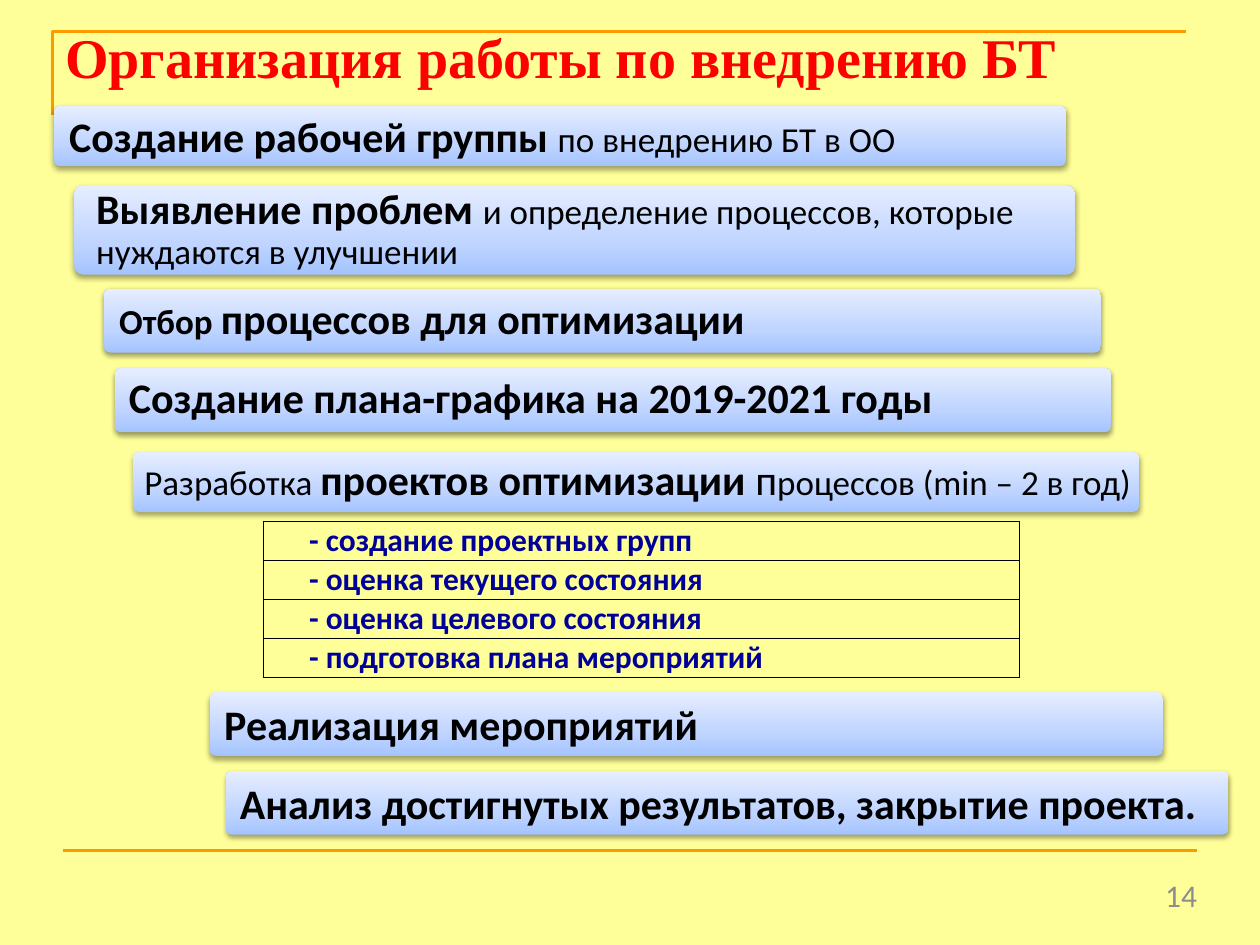
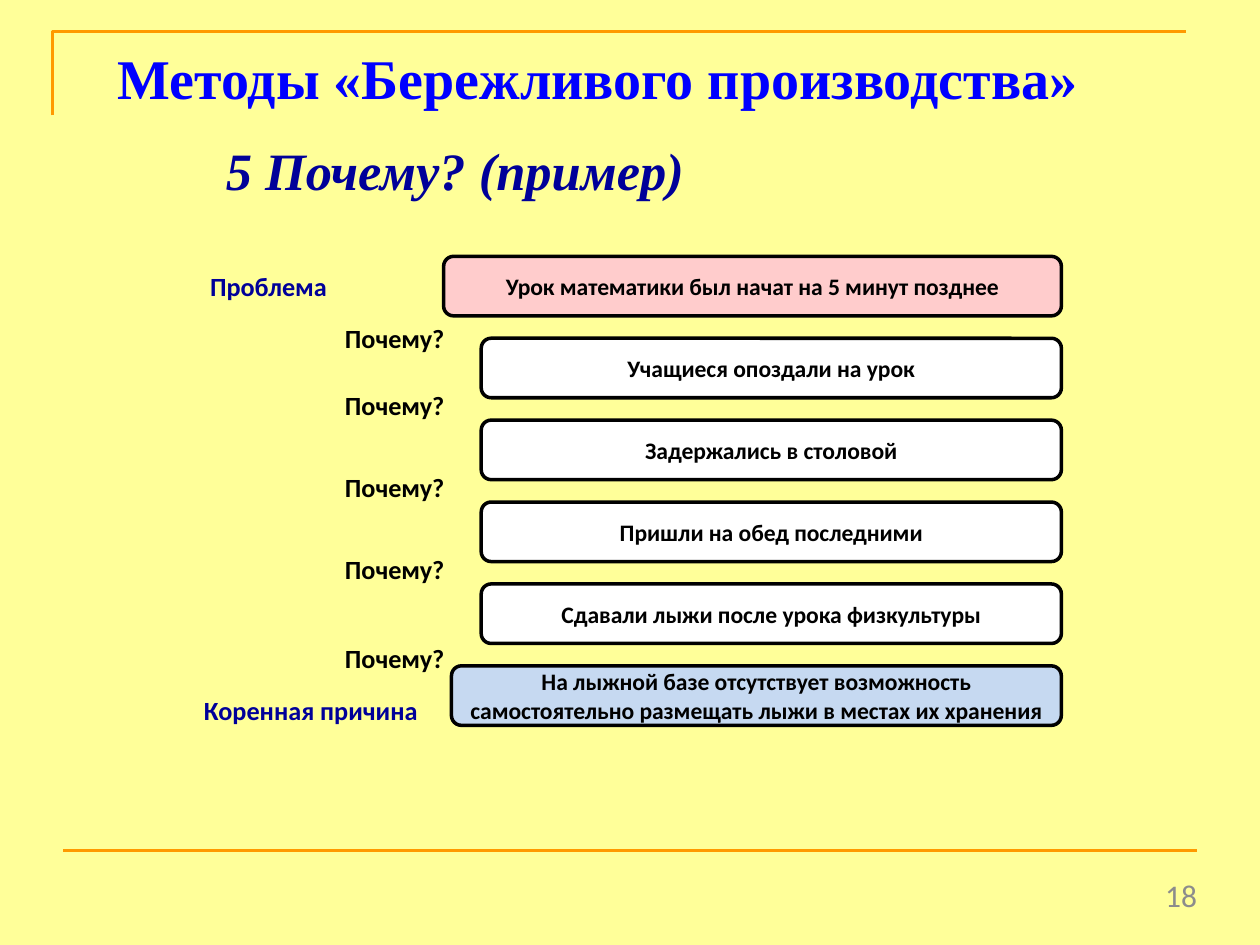
from copy import deepcopy

from pptx import Presentation
from pptx.dml.color import RGBColor
from pptx.enum import shapes, text
from pptx.oxml import parse_xml
from pptx.oxml.ns import nsdecls, qn
from pptx.util import Pt

YELLOW = RGBColor(0xFF, 0xFF, 0x99)
ORANGE = RGBColor(0xFF, 0x99, 0x00)
RED = RGBColor(0xFF, 0x00, 0x00)
BLUE = RGBColor(0x00, 0x00, 0xFF)
NAVY = RGBColor(0x00, 0x00, 0x99)
BLACK = RGBColor(0x00, 0x00, 0x00)
WHITE = RGBColor(0xFF, 0xFF, 0xFF)
GRAY = RGBColor(0x8C, 0x8C, 0x8C)
PINK = RGBColor(0xFF, 0xCC, 0xCC)
PALE_BLUE = RGBColor(0xC6, 0xD9, 0xF1)
BAR_GRADIENT = [(0, RGBColor(0xA4, 0xC4, 0xFF)), (0.35, RGBColor(0xBF, 0xD4, 0xFF)),
                (1, RGBColor(0xE6, 0xEE, 0xFF))]
SANS, SERIF = "Calibri", "Times New Roman"

# (left, top, width, height), left inset, line spacing, runs of (text, size, bold)
STEPS = [
    ((31, 60.5, 578, 34.5), 7.5, 1,
     [("Создание рабочей группы ", 24, True), ("по внедрению БТ в ОО", 20, False)]),
    ((42.5, 106, 572, 51), 11, 0.9,
     [("Выявление проблем ", 24, True),
      ("и определение процессов, которые нуждаются в улучшении", 20, False)]),
    ((59.5, 165, 569.5, 36.5), 7.5, 0.9,
     [("Отбор ", 20, True), ("процессов для оптимизации", 24, True)]),
    ((65.5, 210.5, 569.5, 36.5), 7.2, 0.9,
     [("Создание плана-графика на 2019-2021 годы", 24, True)]),
    ((76, 258.5, 575, 34), 5.5, 0.9,
     [("Разработка ", 20, False), ("проектов оптимизации ", 24, True),
      ("п", 24, False), ("роцессов (min – 2 в год)", 20, False)]),
    ((120, 395.5, 544.5, 36.5), 7.2, 1, [("Реализация мероприятий", 24, True)]),
    ((129, 440.5, 573, 36.5), 7.2, 1,
     [("Анализ достигнутых результатов, закрытие проекта.", 24, True)]),
]
PROJECT_TASKS = ["- создание проектных групп", "- оценка текущего состояния",
                 "- оценка целевого состояния", "- подготовка плана мероприятий"]
TASK_TABLE, TASK_ROW = (150.5, 298, 432), 22.3

# left edge, fill, answer
ANSWERS = [
    (253.5, PINK, "Урок математики был начат на 5 минут позднее"),
    (275, WHITE, "Учащиеся опоздали на урок"),
    (275, WHITE, "Задержались в столовой"),
    (275, WHITE, "Пришли на обед последними"),
    (275, WHITE, "Сдавали лыжи после урока физкультуры"),
    (258, PALE_BLUE, "На лыжной базе отсутствует возможность самостоятельно "
                      "размещать лыжи в местах их хранения"),
]
ANSWER_TOP, ANSWER_STEP, ANSWER_HEIGHT, ANSWER_RIGHT = 146.5, 46.8, 34, 606.5
WHY_TOPS = [180.5, 219, 265.5, 312.5, 363.5]
END_LABELS = [("Проблема", (113, 151, 111, 25)),
              ("Коренная причина", (109.5, 393, 141, 25))]


def box(*lengths):
    return [Pt(v) for v in lengths]


def set_insets(tf, left, top=0, right=0, bottom=0):
    tf.margin_left, tf.margin_top, tf.margin_right, tf.margin_bottom = box(
        left, top, right, bottom)


def style(p, size, color, bold=True, name=SANS, italic=False):
    f = p.font
    f.name, f.size, f.bold, f.italic = name, Pt(size), bold, italic
    f.color.rgb = color


def add_label(s, place, words, size, color, **font):
    tf = s.shapes.add_textbox(*box(*place)).text_frame
    tf.word_wrap = True
    p = tf.paragraphs[0]
    p.text = words
    style(p, size, color, **font)
    return tf


def add_slide(prs, heading, place, color, number):
    """Add a slide with the shared title style, orange rules and page number."""
    s = prs.slides.add_slide(prs.slide_layouts[5])
    title = s.shapes.title
    title.left, title.top, title.width, title.height = box(*place)
    tf = title.text_frame
    tf.auto_size = text.MSO_AUTO_SIZE.NONE
    tf.vertical_anchor = text.MSO_ANCHOR.TOP
    p = tf.paragraphs[0]
    p.text = heading
    p.alignment = text.PP_ALIGN.LEFT
    style(p, 32, color, name=SERIF)

    fb = s.shapes.build_freeform(Pt(30), Pt(66))
    fb.add_line_segments([box(30, 18), box(678, 18)], close=False)
    corner = fb.convert_to_shape()
    corner.fill.background()
    corner.shadow.inherit = False
    rule = s.shapes.add_connector(shapes.MSO_CONNECTOR.STRAIGHT, *box(36, 486, 684, 486))
    rule._element.spPr.append(parse_xml(f"<a:effectLst {nsdecls('a')}/>"))
    for line in (corner.line, rule.line):
        line.color.rgb = ORANGE
        line.width = Pt(1.56)

    tf = add_label(s, (516, 500.5, 168, 29), number, 18, GRAY, bold=False)
    set_insets(tf, 0)
    tf.paragraphs[0].alignment = text.PP_ALIGN.RIGHT
    return s


def add_round_box(s, place):
    sp = s.shapes.add_shape(shapes.MSO_SHAPE.ROUNDED_RECTANGLE, *box(*place))
    sp.shadow.inherit = False
    sp.text_frame.word_wrap = True
    sp.text_frame.vertical_anchor = text.MSO_ANCHOR.MIDDLE
    return sp


def add_step(s, place, inset, spacing, runs):
    sp = add_round_box(s, place)
    sp.adjustments[0] = 0.1
    sp.line.fill.background()
    sp.fill.gradient()
    sp.fill.gradient_angle = 90
    sp_pr = sp._element.spPr
    stops = sp_pr.find(".//" + qn("a:gsLst"))
    stops.insert(1, deepcopy(stops[0]))
    for stop, (position, color) in zip(sp.fill.gradient_stops, BAR_GRADIENT):
        stop.position = position
        stop.color.rgb = color
    sp_pr.find(qn("a:effectLst")).append(parse_xml(
        f'<a:outerShdw {nsdecls("a")} blurRad="{Pt(3.1)}" dist="{Pt(1.6)}" dir="5400000" '
        'rotWithShape="0"><a:srgbClr val="000000"><a:alpha val="38000"/></a:srgbClr>'
        '</a:outerShdw>'))
    tf = sp.text_frame
    set_insets(tf, inset)
    p = tf.paragraphs[0]
    p.alignment = text.PP_ALIGN.LEFT
    p.line_spacing = spacing
    for words, size, bold in runs:
        r = p.add_run()
        r.text = words
        style(r, size, BLACK, bold)


def add_task_table(s):
    left, top, width = TASK_TABLE
    rows = len(PROJECT_TASKS)
    table = s.shapes.add_table(rows, 1, *box(left, top, width, rows * TASK_ROW)).table
    table.first_row = table.horz_banding = False
    for i, task in enumerate(PROJECT_TASKS):
        table.rows[i].height = Pt(TASK_ROW)
        cell = table.cell(i, 0)
        set_insets(cell, 3.6, right=3.6)
        p = cell.text_frame.paragraphs[0]
        p.text = task
        p._p.get_or_add_pPr().set("marL", str(Pt(22.5)))
        style(p, 18, NAVY)
        cell.fill.background()
        tc_pr = cell._tc.get_or_add_tcPr()
        for k, side in enumerate(("lnL", "lnR", "lnT", "lnB")):
            tc_pr.insert(k, parse_xml(
                f'<a:{side} {nsdecls("a")} w="{Pt(1)}"><a:solidFill>'
                f'<a:srgbClr val="{BLACK}"/></a:solidFill></a:{side}>'))


def add_answer(s, index, left, fill, words):
    top = ANSWER_TOP + index * ANSWER_STEP
    sp = add_round_box(s, (left, top, ANSWER_RIGHT - left, ANSWER_HEIGHT))
    sp.fill.solid()
    sp.fill.fore_color.rgb = fill
    sp.line.color.rgb = BLACK
    sp.line.width = Pt(2)
    p = sp.text_frame.paragraphs[0]
    p.text = words
    p.alignment = text.PP_ALIGN.CENTER
    style(p, 13.5, BLACK)


def build_rollout(prs):
    s = add_slide(prs, "Организация работы по внедрению БТ", (30, 9.5, 663, 46), RED, "14")
    for step in STEPS:
        add_step(s, *step)
    add_task_table(s)


def build_five_whys(prs):
    s = add_slide(prs, "Методы «Бережливого производства»", (60, 21, 610, 46), BLUE, "18")
    tf = add_label(s, (129, 79, 486, 55), "5 Почему? (пример)", 30, NAVY,
                   name=SERIF, italic=True)
    set_insets(tf, 0)
    for i, answer in enumerate(ANSWERS):
        add_answer(s, i, *answer)
    for top in WHY_TOPS:
        add_label(s, (190, top, 85, 25), "Почему?", 15, BLACK)
    for words, place in END_LABELS:
        add_label(s, place, words, 15, NAVY)


def main():
    prs = Presentation()
    prs.slide_width, prs.slide_height = box(720, 540)
    background = prs.slide_master.background.fill
    background.solid()
    background.fore_color.rgb = YELLOW
    build_rollout(prs)
    build_five_whys(prs)
    prs.save("out.pptx")


if __name__ == "__main__":
    main()
